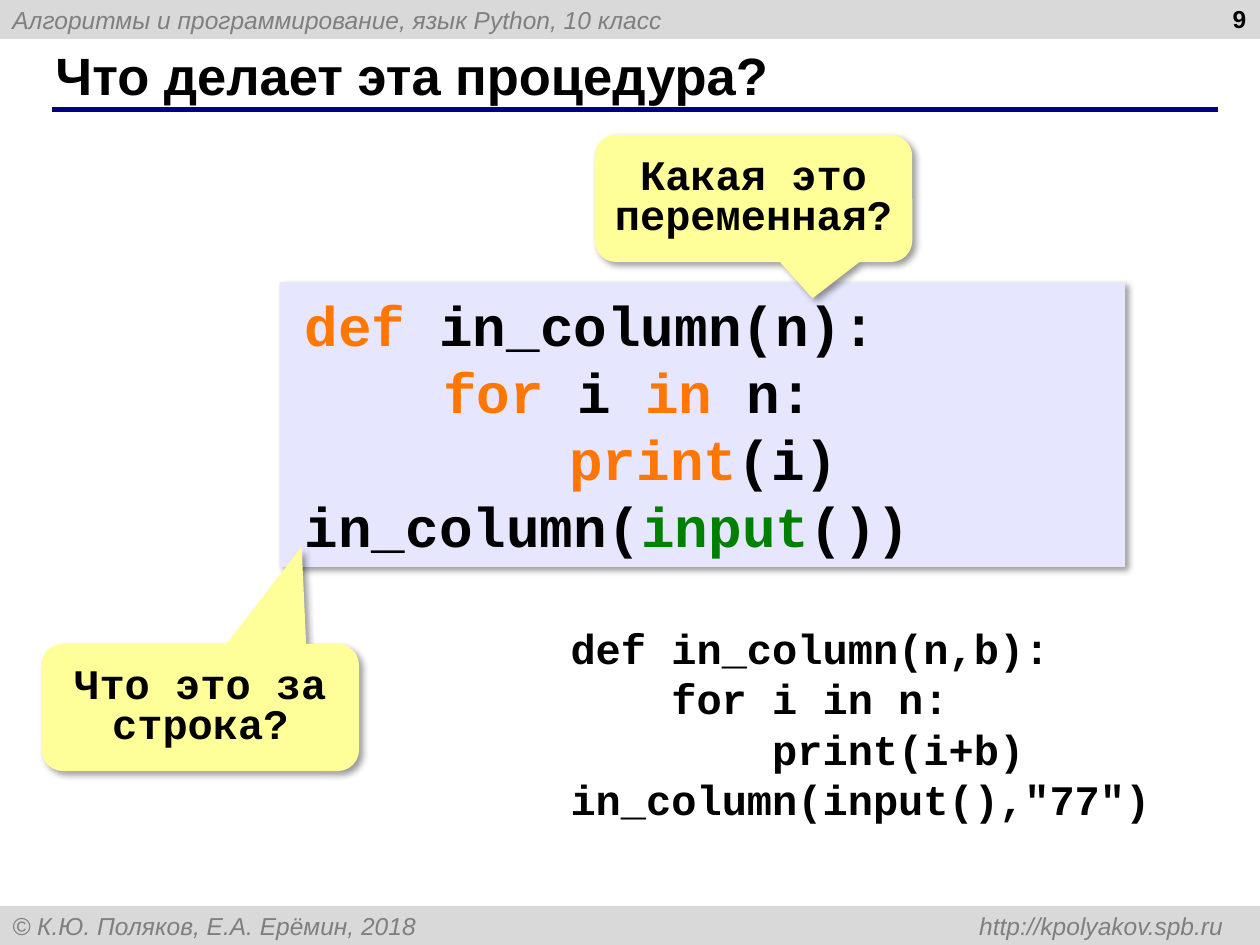
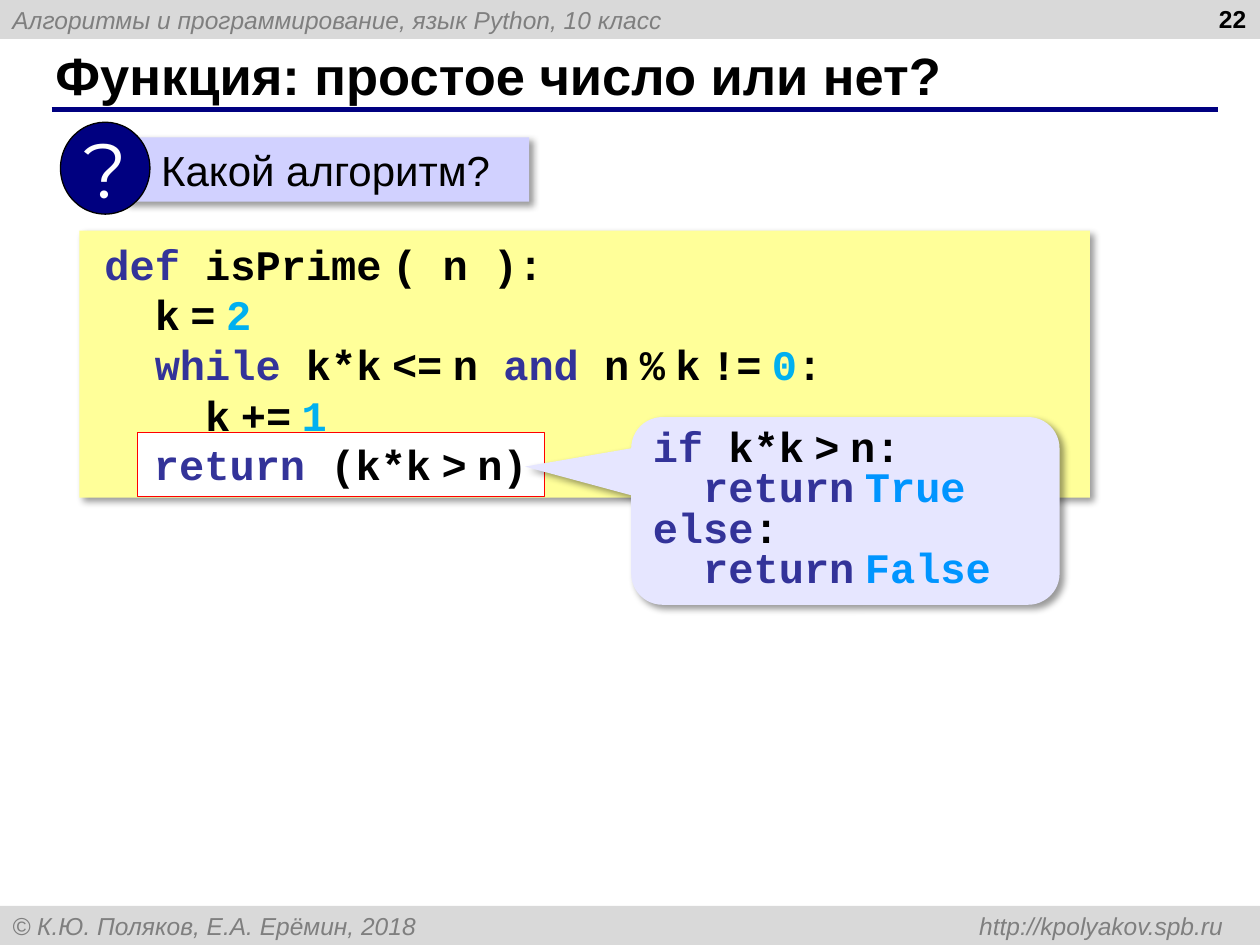
from lxml import etree
from pptx import Presentation
from pptx import util as u
from pptx.dml.color import RGBColor
from pptx.enum import shapes, text
from pptx.oxml import ns

WIDTH, HEIGHT, BAND = 10, 7.5, 0.31
SANS, MONO = "Arial", "Courier New"
BLACK, WHITE, GRAY, BAND_GRAY, NAVY = "000000", "FFFFFF", "7F7F7F", "D9D9D9", "000080"
YELLOW, LAVENDER, LILAC, RED = "FFFF99", "E6E6FF", "D1D1FF", "FF0000"
ORANGE, GREEN, INDIGO, BLUE = "FF7700", "008000", "333399", "0000FF"
CYAN, SKY = "00B0F0", "0095FF"
RECT, OVAL = shapes.MSO_SHAPE.RECTANGLE, shapes.MSO_SHAPE.OVAL
CALLOUT = shapes.MSO_SHAPE.ROUNDED_RECTANGULAR_CALLOUT
TOP, MIDDLE = text.MSO_ANCHOR.TOP, text.MSO_ANCHOR.MIDDLE
LEFT, CENTER, RIGHT = text.PP_ALIGN.LEFT, text.PP_ALIGN.CENTER, text.PP_ALIGN.RIGHT

# Content: a line is (indent in inches, runs); a run is (text, colour)
# and "~" in a run stands for a narrow space.
NARROW, NARROW_SIZE = "~", 10
COURSE = "Алгоритмы и программирование, язык Python, 10 класс"
FOOTER = "© К.Ю. Поляков, Е.А. Ерёмин, 2018\thttp://kpolyakov.spb.ru"

COLUMN_CODE = [
    (0.1, [("def ", ORANGE), ("in_column(n):", BLACK)]),
    (1.2, [("for ", ORANGE), ("i ", BLACK), ("in ", ORANGE), ("n:", BLACK)]),
    (2.2, [("print", ORANGE), ("(i)", BLACK)]),
    (0.1, [("in_column(", BLACK), ("input", GREEN), ("())", BLACK)]),
]
TWO_ARGUMENT_CODE = [
    (0, [("def in_column(n,b):", BLACK)]),
    (0.8, [("for i in n:", BLACK)]),
    (1.6, [("print(i+b)", BLACK)]),
    (0, [('in_column(input(),"77")', BLACK)]),
]
QUESTIONS = [  # text, box, pointer tip
    ("Какая это переменная?", (4.72, 1.07, 2.52, 1.01), (0.186, 0.785)),
    ("Что это за строка?", (0.33, 5.11, 2.52, 1.01), (0.319, -1.263)),
]
RETURN_TEST = " (k*k~>~n)"
PRIME_CODE = [
    (0.1, [("def ", INDIGO), ("isPrime~( n ):", BLACK)]),
    (0.5, [("k~=~", BLACK), ("2", CYAN)]),
    (0.5, [("while", INDIGO), (" k*k~<=~n ", BLACK), ("and", INDIGO),
           (" n~%~k~!=~", BLACK), ("0", CYAN), (":", BLACK)]),
    (0.9, [("k~+=~", BLACK), ("1", CYAN)]),
    (0.5, [("return", BLUE), (RETURN_TEST, BLACK)]),
]
RETURN_LINE = [(0, [("return", INDIGO), (RETURN_TEST, BLACK)])]
BRANCH_CODE = [
    (0, [("if ", INDIGO), ("k*k~>~n:", BLACK)]),
    (0.4, [("return~", INDIGO), ("True", SKY)]),
    (0, [("else", INDIGO), (":", BLACK)]),
    (0.4, [("return~", INDIGO), ("False", SKY)]),
]


def color(value):
    return RGBColor.from_string(value)


def inches(values):
    return [u.Inches(value) for value in values]


def one_line(words, tone=BLACK, indent=0):
    return [(indent, [(words, tone)])]


def write(shape, lines, size=24, font=MONO, bold=True, italic=False,
          align=LEFT, anchor=MIDDLE, spacing=None, wrap=True):
    frame = shape.text_frame
    frame.word_wrap, frame.vertical_anchor = wrap, anchor
    frame.auto_size = text.MSO_AUTO_SIZE.NONE
    for number, (indent, runs) in enumerate(lines):
        paragraph = frame.add_paragraph() if number else frame.paragraphs[0]
        paragraph.alignment = align
        if spacing:
            paragraph.line_spacing = spacing
        if indent:
            paragraph._p.get_or_add_pPr().set("marL", str(u.Inches(indent)))
        for words, tone in runs:
            for position, part in enumerate(words.split(NARROW)):
                pieces = [(" ", NARROW_SIZE)] if position else []
                for piece, points in pieces + [(part, size)]:
                    if not piece:
                        continue
                    run = paragraph.add_run()
                    run.text = piece
                    run.font.name, run.font.size = font, u.Pt(points)
                    run.font.bold, run.font.italic = bold, italic
                    run.font.color.rgb = color(tone)


def add_shadow(shape):
    effects = shape._element.spPr.find(ns.qn("a:effectLst"))
    shadow = etree.SubElement(effects, ns.qn("a:outerShdw"), blurRad=str(u.Pt(4)),
                              dist=str(u.Pt(3)), dir=str(45 * 60000),
                              algn="tl", rotWithShape="0")
    tone = etree.SubElement(shadow, ns.qn("a:srgbClr"), val=BLACK)
    etree.SubElement(tone, ns.qn("a:alpha"), val="40000")


def add_box(slide, box, lines, fill, kind=RECT, line=None, shadow=False,
            tip=None, **style):
    shape = slide.shapes.add_shape(kind, *inches(box))
    shape.shadow.inherit = False
    shape.fill.solid()
    shape.fill.fore_color.rgb = color(fill)
    if line:
        shape.line.color.rgb, shape.line.width = color(line), u.Pt(0.75)
    else:
        shape.line.fill.background()
    if shadow:
        add_shadow(shape)
    if tip:
        shape.adjustments[0], shape.adjustments[1] = tip
        shape.adjustments[2] = 0.167
    write(shape, lines, **style)
    return shape


def add_label(slide, box, lines, **style):
    write(slide.shapes.add_textbox(*inches(box)), lines, anchor=TOP, **style)


def add_page(presentation, title, number):
    slide = presentation.slides.add_slide(presentation.slide_layouts[5])
    # Bands
    band_style = dict(size=14, font=SANS, bold=False, italic=True)
    add_box(slide, (0, 0, WIDTH, BAND), one_line(COURSE, GRAY), BAND_GRAY, **band_style)
    footer = add_box(slide, (0, HEIGHT - BAND, WIDTH, BAND), one_line(FOOTER, GRAY),
                     BAND_GRAY, **band_style)
    properties = footer.text_frame.paragraphs[0]._p.get_or_add_pPr()
    tabs = etree.SubElement(properties, ns.qn("a:tabLst"))
    etree.SubElement(tabs, ns.qn("a:tab"), pos=str(u.Inches(9.61)), algn="r")
    # Title and its rule
    rule = slide.shapes.add_connector(shapes.MSO_CONNECTOR.STRAIGHT,
                                      *inches((0.41, 0.87, 9.67, 0.87)))
    rule.line.color.rgb, rule.line.width = color(NAVY), u.Pt(3)
    etree.SubElement(rule._element.spPr, ns.qn("a:effectLst"))
    heading = slide.shapes.title
    heading.left, heading.top, heading.width, heading.height = inches(
        (0.34, 0.33, 9.16, 0.52))
    write(heading, one_line(title), size=30, font=SANS)
    # Page number
    add_label(slide, (7.66, -0.02, 2.33, 0.52), one_line(number),
              size=14, font=SANS, align=RIGHT)
    return slide


def add_procedure_slide(presentation):
    slide = add_page(presentation, "Что делает эта процедура?", "9")
    add_box(slide, (2.22, 2.24, 6.71, 2.26), COLUMN_CODE, LAVENDER, shadow=True, size=32)
    for question, box, tip in QUESTIONS:
        add_box(slide, box, one_line(question), YELLOW, kind=CALLOUT, tip=tip,
                shadow=True, align=CENTER, spacing=0.8)
    add_label(slide, (4.43, 4.89, 5, 1.72), TWO_ARGUMENT_CODE)


def add_prime_slide(presentation):
    slide = add_page(presentation, "Функция: простое число или нет?", "22")
    # Question with its badge
    add_box(slide, (0.99, 1.09, 3.21, 0.51), one_line("Какой алгоритм?", indent=0.19),
            LILAC, shadow=True, font=SANS, bold=False)
    add_box(slide, (0.48, 0.97, 0.71, 0.73), one_line("?", WHITE), NAVY, kind=OVAL,
            line=BLACK, size=44, font="Montserrat", bold=False, align=CENTER, wrap=False)
    # Code, its highlighted last line and the explanation
    add_box(slide, (0.63, 1.83, 8.02, 2.12), PRIME_CODE, YELLOW, shadow=True)
    add_box(slide, (1.09, 3.43, 3.23, 0.51), RETURN_LINE, WHITE, line=RED,
            align=CENTER, anchor=TOP)
    add_box(slide, (5.01, 3.31, 3.4, 1.49), BRANCH_CODE, LAVENDER, kind=CALLOUT,
            tip=(-0.748, -0.236), shadow=True, spacing=0.8)


def main():
    presentation = Presentation()
    presentation.slide_width, presentation.slide_height = inches((WIDTH, HEIGHT))
    add_procedure_slide(presentation)
    add_prime_slide(presentation)
    presentation.save("out.pptx")


if __name__ == "__main__":
    main()
